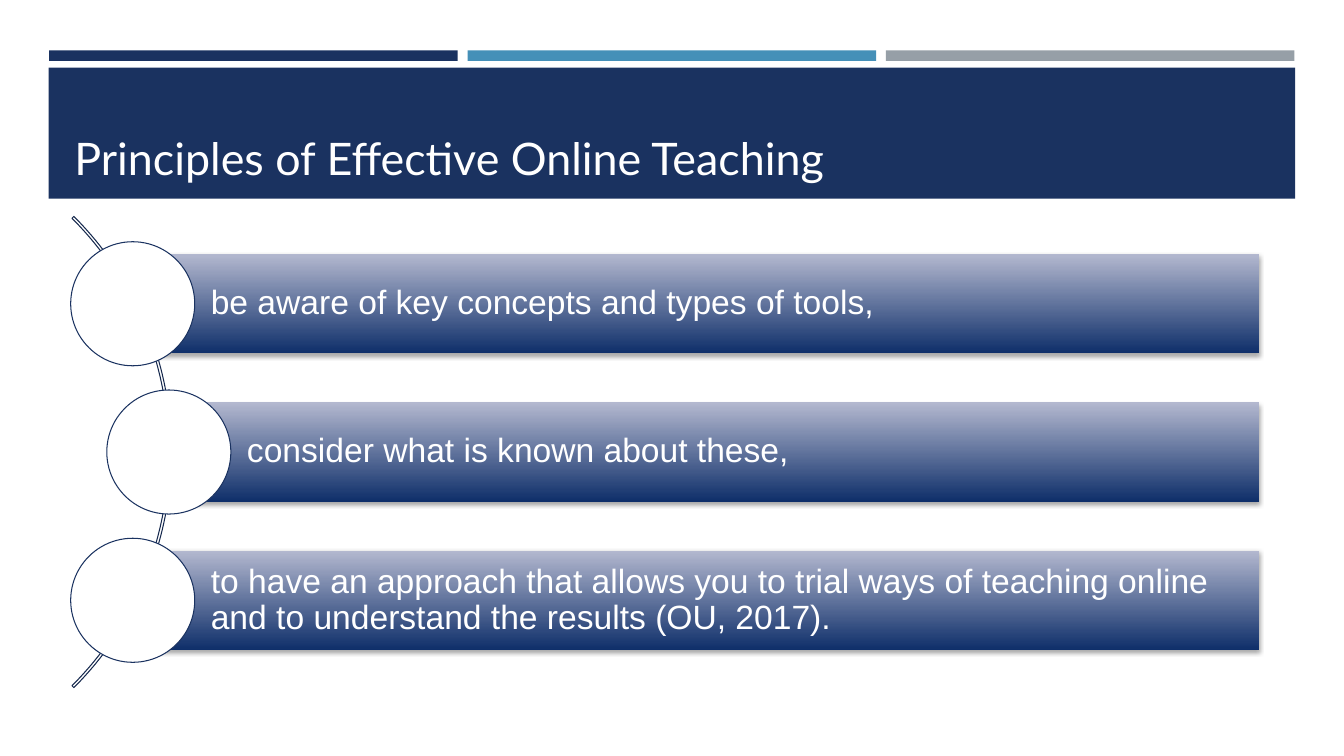
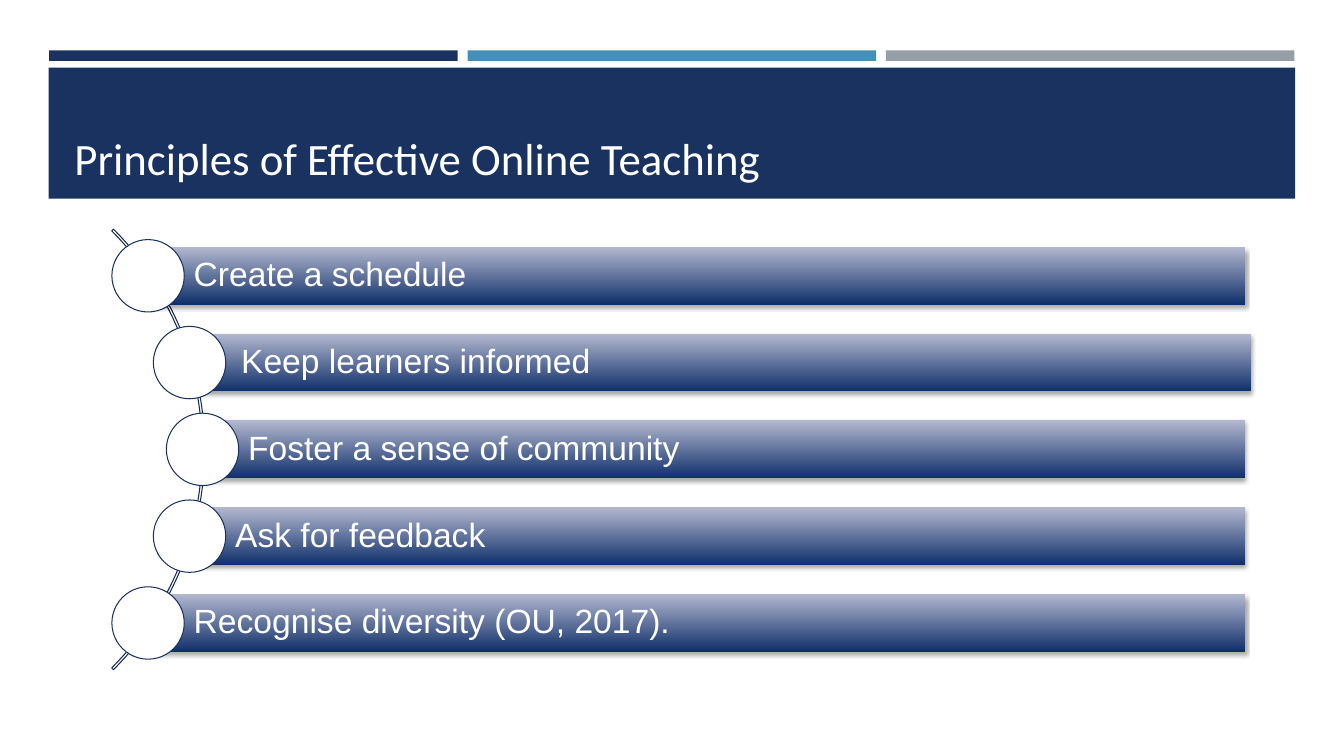
import pptx
import pptx.util
import pptx.dml.color
import pptx.enum.shapes
import pptx.enum.text
import pptx.oxml
import pptx.oxml.ns

Pt = pptx.util.Pt
SHAPE = pptx.enum.shapes.MSO_SHAPE
ANCHOR = pptx.enum.text.MSO_ANCHOR

COLORS = {
    "navy": "1A3260",
    "blue": "4590B8",
    "gray": "969FA7",
    "white": "FFFFFF",
    "arc": "15284D",
    "bar_bottom": "0F2F6A",
    "bar_top": "B3B8CF",
    "shadow": "000000",
}
TITLE = "Principles of Effective Online Teaching"
STRIPE_LEFT, STRIPE_WIDTH, STRIPE_PITCH = 35.1, 291.8, 298.9

PRINCIPLES = {
    "title_font": "Lato",
    "arc_left": -353.5,
    "arc_size": 476,
    "circle_size": 88.6,
    "first_middle": 217,
    "pitch": 105.9,
    "bar_right": 899.3,
    "steps": [
        ("be aware of key concepts and types of tools,", 94.8, 0),
        ("consider what is known about these,", 120.6, 0),
        ("to have an approach that allows you to trial ways of teaching online "
         "and to understand the results (OU, 2017).", 94.8, 0),
    ],
}
PRACTICES = {
    "title_font": "Calibri",
    "arc_left": -298.8,
    "arc_size": 445,
    "circle_size": 51.7,
    "first_middle": 197,
    "pitch": 62,
    "bar_right": 889.6,
    "steps": [
        ("Create a schedule", 105.8, 0),
        ("Keep learners informed", 135.4, 4.3),
        ("Foster a sense of community", 144.7, 0),
        ("Ask for feedback", 135.4, 0),
        ("Recognise diversity (OU, 2017).", 105.8, 0),
    ],
}


def rgb(name):
    return pptx.dml.color.RGBColor.from_string(COLORS[name])


def add_figure(slide, kind, left, top, width, height, fill=None, line=None):
    figure = slide.shapes.add_shape(kind, Pt(left), Pt(top), Pt(width), Pt(height))
    figure.shadow.inherit = False
    if fill:
        figure.fill.solid()
        figure.fill.fore_color.rgb = rgb(fill)
    else:
        figure.fill.background()
    if line:
        figure.line.color.rgb = rgb(line)
        figure.line.width = Pt(0.75)
    else:
        figure.line.fill.background()
    return figure


def write_text(frame, text, font, size, anchor, insets):
    frame.word_wrap = True
    frame.vertical_anchor = anchor
    frame.margin_left, frame.margin_top, frame.margin_right, frame.margin_bottom = map(Pt, insets)
    frame.text = text
    paragraph = frame.paragraphs[0]
    paragraph.alignment = pptx.enum.text.PP_ALIGN.LEFT
    for run in paragraph.runs:
        run.font.name = font
        run.font.size = Pt(size)
        run.font.color.rgb = rgb("white")
    return paragraph


def add_header(slide, title_font):
    for index, color in enumerate(("navy", "blue", "gray")):
        add_figure(slide, SHAPE.RECTANGLE, STRIPE_LEFT + index * STRIPE_PITCH, 36,
                   STRIPE_WIDTH, 7.5, color)
    add_figure(slide, SHAPE.RECTANGLE, 34.8, 48.4, 890.4, 93.6, "navy")
    title = slide.shapes.add_textbox(Pt(46.1), Pt(55.4), Pt(868.3), Pt(80))
    write_text(title.text_frame, TITLE, title_font, 32, ANCHOR.BOTTOM, (7.2, 3.6, 7.2, 3.6))


def add_drop_shadow(bar):
    effects = bar._element.spPr.find(pptx.oxml.ns.qn("a:effectLst"))
    effects.append(pptx.oxml.parse_xml(
        f'<a:outerShdw {pptx.oxml.ns.nsdecls("a")} blurRad="{Pt(3.1)}" dist="{Pt(1.8)}" '
        f'dir="5400000" rotWithShape="0"><a:srgbClr val="{COLORS["shadow"]}">'
        '<a:alpha val="35000"/></a:srgbClr></a:outerShdw>'))


def add_bar(slide, text, left, middle, right, circle_size):
    height = 0.8 * circle_size
    bar = add_figure(slide, SHAPE.RECTANGLE, left, middle - height / 2, right - left, height)
    bar.fill.gradient()
    bar.fill.gradient_angle = 90
    for stop, color in zip(bar.fill.gradient_stops, ("bar_bottom", "bar_top")):
        stop.color.rgb = rgb(color)
    add_drop_shadow(bar)
    paragraph = write_text(bar.text_frame, text, "Arial", 24, ANCHOR.MIDDLE,
                           (0.63 * circle_size, 4.8, 4.8, 4.8))
    paragraph.line_spacing = 0.9


def add_arc(slide, left, middle, size):
    arc = add_figure(slide, SHAPE.BLOCK_ARC, left, middle - size / 2, size, size, line="arc")
    for index, value in enumerate((189, 27, 0.004)):
        arc.adjustments[index] = value


def add_curved_list(slide, content):
    size, steps = content["circle_size"], content["steps"]
    first, pitch = content["first_middle"], content["pitch"]
    add_arc(slide, content["arc_left"], first + pitch * (len(steps) - 1) / 2, content["arc_size"])
    for index, (text, center, bar_shift) in enumerate(steps):
        middle = first + index * pitch
        add_bar(slide, text, center + bar_shift, middle, content["bar_right"] + bar_shift, size)
        add_figure(slide, SHAPE.OVAL, center - size / 2, middle - size / 2, size, size,
                   "white", "navy")


def main():
    deck = pptx.Presentation()
    deck.slide_width, deck.slide_height = Pt(960), Pt(540)
    for content in (PRINCIPLES, PRACTICES):
        slide = deck.slides.add_slide(deck.slide_layouts[6])
        add_header(slide, content["title_font"])
        add_curved_list(slide, content)
    deck.save("out.pptx")


if __name__ == "__main__":
    main()
